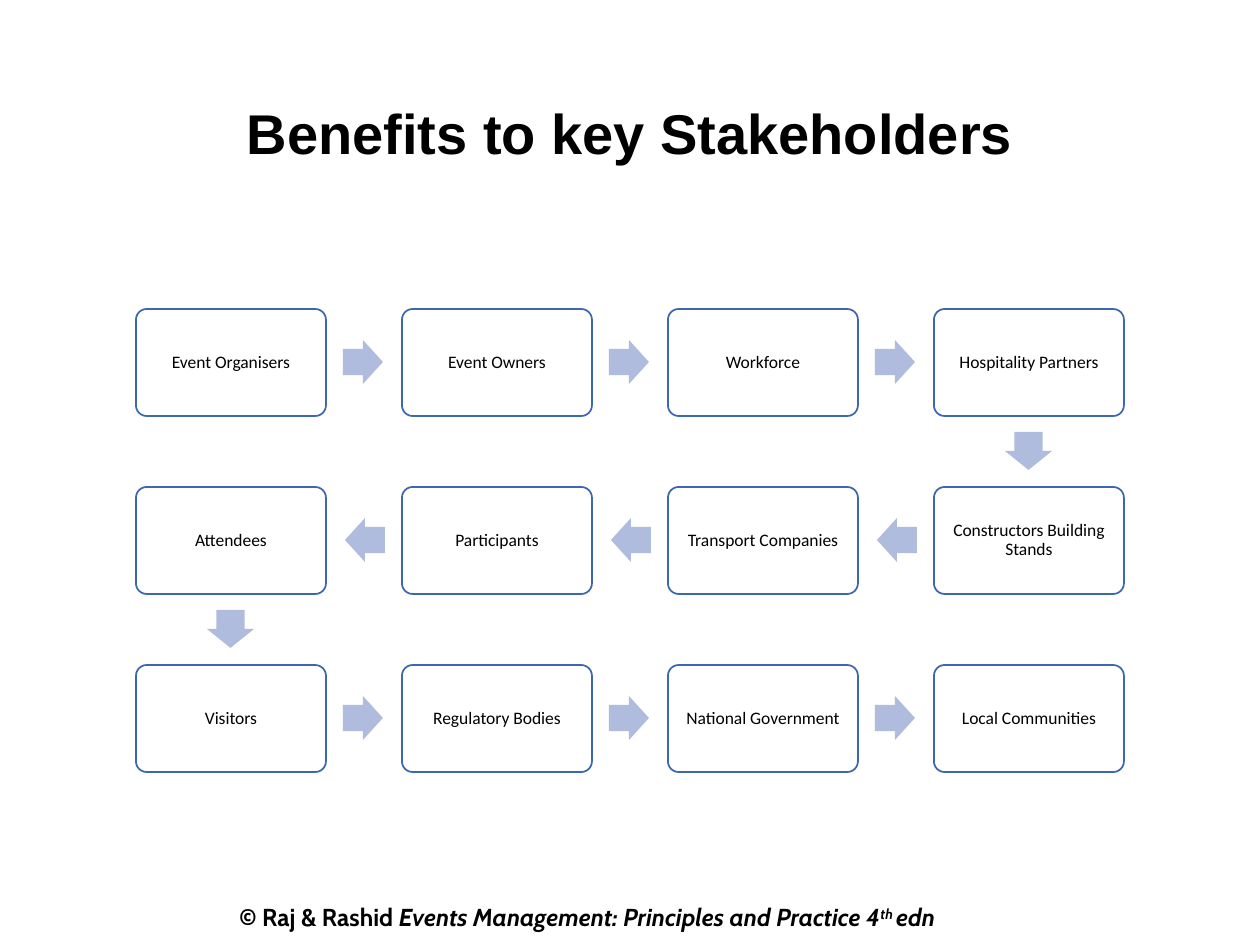
"""Build the slide showing event stakeholders as a serpentine flow."""
from dataclasses import dataclass
from typing import Any

from pptx import Presentation
from pptx.dml.color import RGBColor
from pptx.enum.shapes import MSO_SHAPE
from pptx.enum.text import MSO_ANCHOR, MSO_AUTO_SIZE, PP_ALIGN
from pptx.util import Emu, Pt

ROUNDED = MSO_SHAPE.ROUNDED_RECTANGLE
RIGHT = MSO_SHAPE.RIGHT_ARROW
LEFT = MSO_SHAPE.LEFT_ARROW
DOWN = MSO_SHAPE.DOWN_ARROW
CENTER = PP_ALIGN.CENTER
MIDDLE = MSO_ANCHOR.MIDDLE
TOP = MSO_ANCHOR.TOP
GROW = MSO_AUTO_SIZE.SHAPE_TO_FIT_TEXT


@dataclass(frozen=True)
class Theme:
    text: RGBColor = RGBColor(0x00, 0x00, 0x00)
    box: RGBColor = RGBColor(0xFF, 0xFF, 0xFF)
    border: RGBColor = RGBColor(0x3D, 0x67, 0xB1)
    arrow: RGBColor = RGBColor(0xB0, 0xBC, 0xDE)
    border_width: Pt = Pt(1)
    title_size: Pt = Pt(32)
    footer_size: Pt = Pt(14)
    box_size: Pt = Pt(10)
    title_font: str = "Arial"
    footer_font: str = "Cabin"
    box_font: str = "Calibri"


@dataclass(frozen=True)
class Rect:
    x: int
    y: int
    w: int
    h: int

    def emu(self) -> list[Emu]:
        return [px(n) for n in (self.x, self.y, self.w, self.h)]


@dataclass(frozen=True)
class Run:
    text: str
    italic: bool = False
    baseline: int = 0


THEME = Theme()
TITLE = Rect(63, 92, 1134, 132)
FOOTER = Rect(227, 896, 878, 43)
FOOTER_RUNS = (
    Run("© Raj & Rashid "),
    Run("Events Management: Principles and Practice 4", True),
    Run("th ", True, 30000),
    Run("edn", True),
)
STAKEHOLDERS = (
    "Event Organisers", "Event Owners", "Workforce", "Hospitality Partners",
    "Constructors Building Stands", "Transport Companies", "Participants", "Attendees",
    "Visitors", "Regulatory Bodies", "National Government", "Local Communities",
)
COLS = 4
FIRST_BOX = Rect(136, 309, 190, 107)
PITCH_X, PITCH_Y = 266, 178
ARROW_W, ARROW_H, ARROW_GAP = 40, 44, 17
DOWN_W, DOWN_H, DOWN_GAP = 47, 38, 16
BOX_INSET = 8


def px(n: int) -> Emu:
    return Emu(914400 * n // 126)


def apply(obj: Any, fmt: dict[str, Any]) -> None:
    for name, value in fmt.items():
        setattr(obj, name, value)


def add_runs(p: Any, runs: tuple[Run, ...], fmt: dict[str, Any]) -> None:
    for run in runs:
        r = p.add_run()
        r.text = run.text
        apply(r.font, fmt)
        r.font.color.rgb = THEME.text
        if run.italic:
            r.font.italic = True
        if run.baseline:
            r.font._element.set("baseline", str(run.baseline))


def add_shape(slide: Any, kind: Any, rect: Rect, fill: RGBColor, adjust: tuple[float, ...]) -> Any:
    sp = slide.shapes.add_shape(kind, *rect.emu())
    sp.shadow.inherit = False
    sp.fill.solid()
    sp.fill.fore_color.rgb = fill
    sp.line.fill.background()
    for i, value in enumerate(adjust):
        sp.adjustments[i] = value
    return sp


def box_rect(step: int) -> Rect:
    row, col = divmod(step, COLS)
    if row % 2:
        col = COLS - 1 - col
    return Rect(FIRST_BOX.x + col * PITCH_X, FIRST_BOX.y + row * PITCH_Y, FIRST_BOX.w, FIRST_BOX.h)


def add_box(slide: Any, rect: Rect, label: str) -> None:
    sp = add_shape(slide, ROUNDED, rect, THEME.box, (0.1,))
    sp.line.color.rgb = THEME.border
    sp.line.width = THEME.border_width
    tf = sp.text_frame
    inset = px(BOX_INSET)
    apply(tf, {"word_wrap": True, "vertical_anchor": MIDDLE, "margin_left": inset,
               "margin_right": inset, "margin_top": inset, "margin_bottom": inset})
    p = tf.paragraphs[0]
    apply(p, {"alignment": CENTER, "line_spacing": 0.9, "space_after": Pt(4)})
    add_runs(p, (Run(label),), {"size": THEME.box_size, "name": THEME.box_font})


def add_arrow(slide: Any, a: Rect, b: Rect) -> None:
    if a.x == b.x:
        kind = DOWN
        rect = Rect(a.x + (a.w - DOWN_W) // 2, a.y + a.h + DOWN_GAP, DOWN_W, DOWN_H)
    else:
        kind = RIGHT if b.x > a.x else LEFT
        x = a.x + a.w + ARROW_GAP if b.x > a.x else a.x - ARROW_GAP - ARROW_W
        rect = Rect(x, a.y + (a.h - ARROW_H) // 2, ARROW_W, ARROW_H)
    add_shape(slide, kind, rect, THEME.arrow, (0.6, 0.5))


def add_title(slide: Any) -> None:
    tf = slide.shapes.add_textbox(*TITLE.emu()).text_frame
    apply(tf, {"word_wrap": True, "vertical_anchor": TOP})
    p = tf.paragraphs[0]
    p.alignment = CENTER
    add_runs(p, (Run("Benefits to key Stakeholders"),),
             {"size": THEME.title_size, "name": THEME.title_font, "bold": True})


def add_footer(slide: Any) -> None:
    tf = slide.shapes.add_textbox(*FOOTER.emu()).text_frame
    apply(tf, {"word_wrap": False, "auto_size": GROW})
    add_runs(tf.paragraphs[0], FOOTER_RUNS,
             {"size": THEME.footer_size, "name": THEME.footer_font, "bold": True})


def main() -> None:
    prs = Presentation()
    apply(prs, {"slide_width": px(1260), "slide_height": px(945)})
    slide = prs.slides.add_slide(prs.slide_layouts[6])
    add_footer(slide)
    add_title(slide)
    for step, label in enumerate(STAKEHOLDERS):
        rect = box_rect(step)
        if step:
            add_arrow(slide, box_rect(step - 1), rect)
        add_box(slide, rect, label)
    prs.save("out.pptx")


if __name__ == "__main__":
    main()
